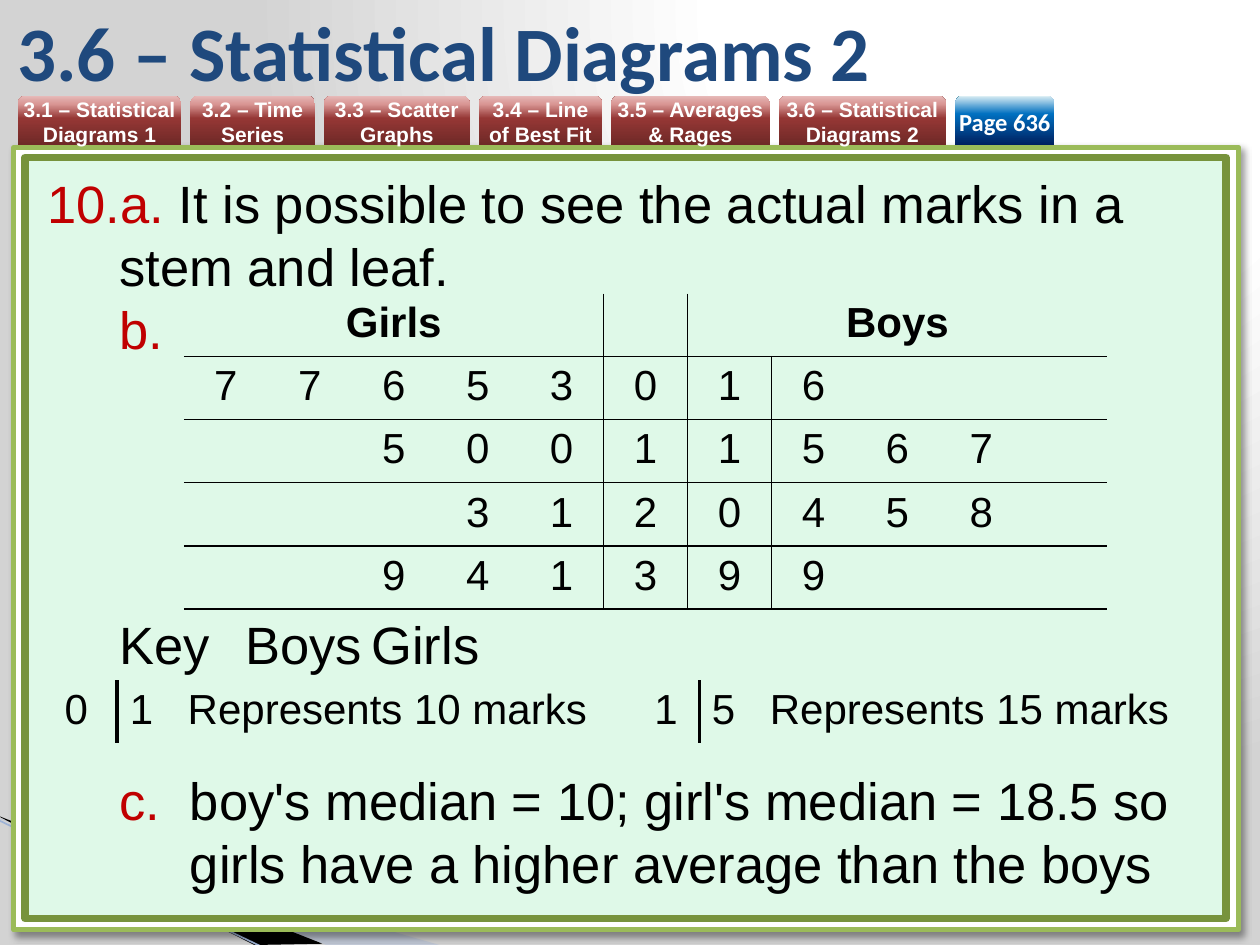
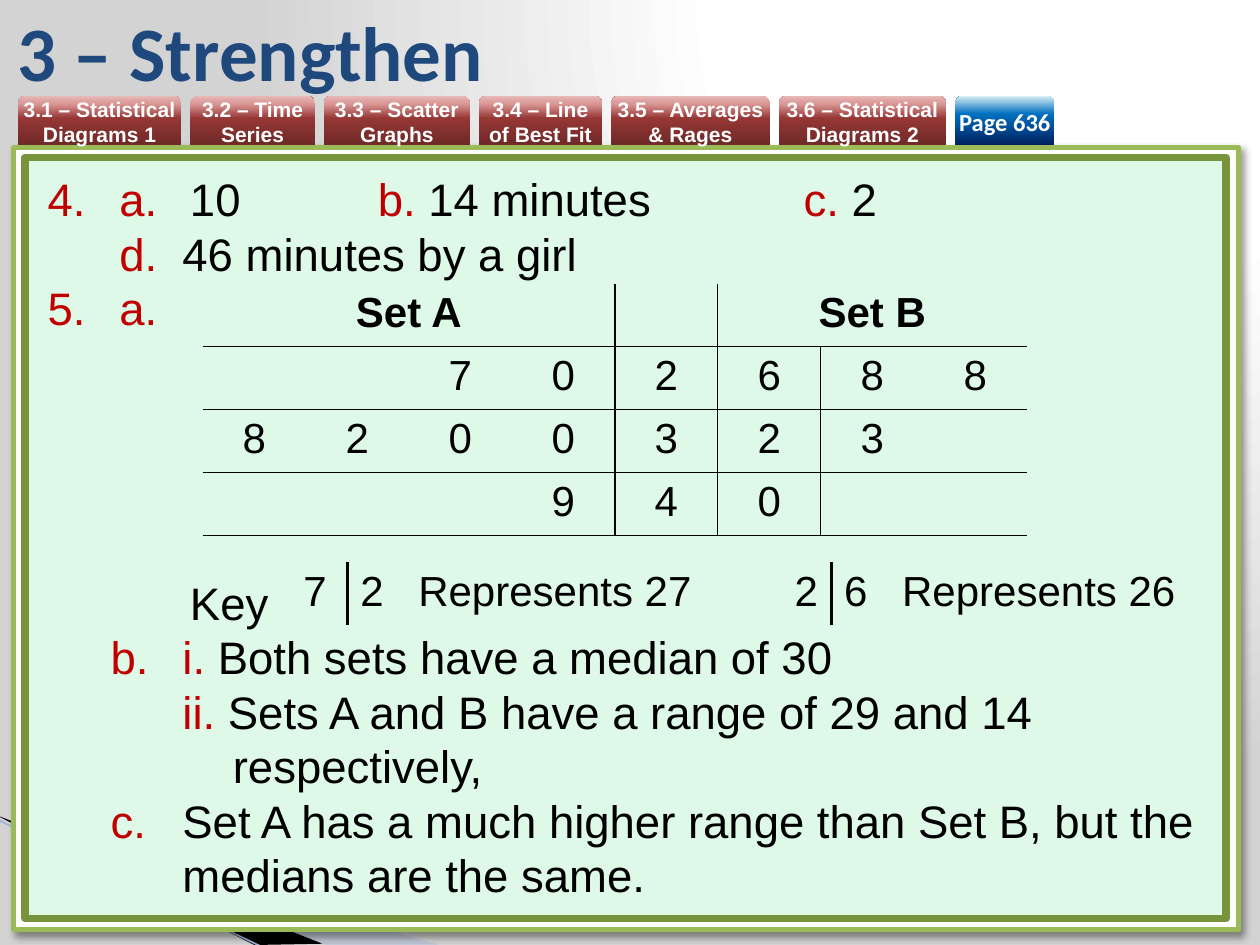
from pptx import Presentation
from pptx.dml.color import RGBColor
from pptx.enum.shapes import MSO_CONNECTOR, MSO_SHAPE
from pptx.enum.text import MSO_ANCHOR, PP_ALIGN
from pptx.oxml import parse_xml
from pptx.oxml.ns import qn
from pptx.util import Inches, Pt
from lxml.etree import SubElement

# Colours
BLACK = RGBColor(0x00, 0x00, 0x00)
WHITE = RGBColor(0xFF, 0xFF, 0xFF)
RED = RGBColor(0xC0, 0x00, 0x00)
NAVY = RGBColor(0x1F, 0x49, 0x7D)
LIME = RGBColor(0x9B, 0xBB, 0x59)
OLIVE = RGBColor(0x77, 0x93, 0x3C)
MINT = RGBColor(0xDF, 0xF9, 0xE8)
MIST = RGBColor(0xA7, 0xB9, 0xDB)
STEEL = RGBColor(0x9E, 0xB3, 0xD6)
GREY = RGBColor(0xD3, 0xD3, 0xD3)
MAROON = [(0, RGBColor(0x6F, 0x29, 0x27)), (54, RGBColor(0x95, 0x37, 0x35)),
          (83, RGBColor(0xD9, 0x96, 0x94)), (100, RGBColor(0xE6, 0xB9, 0xB8))]
BLUE = [(0, RGBColor(0x00, 0x20, 0x60)), (63, RGBColor(0x00, 0x70, 0xC0)),
        (100, RGBColor(0xDB, 0xEE, 0xF4))]
GLOW = [(0, WHITE), (40, WHITE), (100, GREY)]

# Text formats
HEAD = {"name": "Calibri", "size": Pt(44), "bold": True}
TAB = {"name": "Arial", "size": Pt(12), "bold": True}
PAGE = {"name": "Calibri", "size": Pt(14), "bold": True}
CELL = {"name": "Arial", "size": Pt(24), "bold": False}
TOP = {**CELL, "bold": True}

# Shared content: label, width, gradient, format
TABS = [
    ("3.1 – Statistical Diagrams 1", 1.3, MAROON, TAB),
    ("3.2 – Time Series", 0.99, MAROON, TAB),
    ("3.3 – Scatter Graphs", 1.16, MAROON, TAB),
    ("3.4 – Line of Best Fit", 0.98, MAROON, TAB),
    ("3.5 – Averages & Rages", 1.26, MAROON, TAB),
    ("3.6 – Statistical Diagrams 2", 1.33, MAROON, TAB),
    ("Page 636", 0.79, BLUE, PAGE),
]
GAP = 0.07
NO_STYLE = "{2D5ABB26-0587-4C30-8999-92F81FD0307C}"

# Slide content. Paragraph: runs as (text, colour), left and first indents,
# tab stops, number as (scheme, start), space before in points.
# Plot: leaf digits on both sides of the stem.
# Key: left, top, column widths, stem, leaf, meaning.
NUM, ABC = "arabicPeriod", "alphaLcPeriod"
SLIDES = [
    {
        "title": "3.6 – Statistical Diagrams 2",
        "size": 30,
        "text": [
            {"runs": [("a.", RED), (" It is possible to see the actual marks "
                                    "in a stem and leaf.", BLACK)],
             "left": 0.57, "first": -0.57, "num": (NUM, 10)},
            {"runs": [("b.", RED)], "left": 0.57},
            {"runs": [("Key\tBoys\tGirls", BLACK)],
             "left": 0.57, "stops": [2.62, 6], "before": 144},
            {"runs": [("boy's median = 10; girl's median = 18.5 so girls "
                       "have a higher average than the boys", BLACK)],
             "left": 1.13, "first": -0.56, "num": (ABC, 3), "before": 53},
        ],
        "plot": {
            "at": (1.46, 2.33), "width": 7.33, "sides": (5, 5),
            "heads": ("Girls", "Boys"),
            "rows": [("77653", "0", "16"), ("500", "1", "1567"),
                     ("31", "2", "0458"), ("941", "3", "99")],
        },
        "keys": [(0.28, 5.4, (0.65, 3.92), "0", "1", "Represents 10 marks"),
                 (5.02, 5.4, (0.53, 4.02), "1", "5", "Represents 15 marks")],
    },
    {
        "title": "3 – Strengthen",
        "size": 26,
        "text": [
            {"runs": [("a.", RED), ("\t10\t", BLACK), ("b.", RED),
                      (" 14 minutes\t", BLACK), ("c.", RED), (" 2", BLACK)],
             "left": 0.57, "first": -0.57, "stops": [1.13, 2.62, 6],
             "num": (NUM, 4)},
            {"runs": [("d.", RED), ("\t46 minutes by a girl", BLACK)],
             "left": 0.57, "stops": [1.16]},
            {"runs": [("a.", RED)],
             "left": 0.57, "first": -0.57, "num": (NUM, 5)},
            {"runs": [("Key", BLACK)], "left": 1.13, "before": 137},
            {"runs": [("i.", RED), (" Both sets have a median of 30", BLACK)],
             "left": 1.07, "first": -0.57, "num": (ABC, 2)},
            {"runs": [("ii.", RED), (" Sets A and B have a range of 29 and 14 "
                                     "respectively,", BLACK)],
             "left": 1.47, "first": -0.4},
            {"runs": [("Set A has a much higher range than Set B, but the "
                       "medians are the same.", BLACK)],
             "left": 1.07, "first": -0.57, "num": (ABC, 3)},
        ],
        "plot": {
            "at": (1.61, 2.25), "width": 6.54, "sides": (4, 3),
            "heads": ("Set A", "Set B"),
            "rows": [("70", "2", "688"), ("8200", "3", "23"),
                     ("9", "4", "0")],
        },
        "keys": [(2.24, 4.46, (0.52, 3.11), "7", "2", "Represents 27"),
                 (6.2, 4.46, (0.4, 3.04), "2", "6", "Represents 26")],
    },
]


def box(*sides):
    return [Inches(side) for side in sides]


def add(parent, tag, **attrs):
    node = SubElement(parent, qn(tag))
    for name, val in attrs.items():
        node.set(name, str(val))
    return node


def write(par, text, form, color):
    run = par.add_run()
    run.text = text
    for name, val in form.items():
        setattr(run.font, name, val)
    run.font.color.rgb = color


def blend(parent, stops, circle=False):
    """Make a gradient fill, linear upwards or circular from the top right."""
    grad = add(parent, "a:gradFill", rotWithShape=1)
    marks = add(grad, "a:gsLst")
    for pos, color in stops:
        add(add(marks, "a:gs", pos=pos * 1000), "a:srgbClr", val=color)
    if circle:
        way = add(grad, "a:path", path="circle")
        add(way, "a:fillToRect", l=65000, t=0, r=0, b=98000)
    else:
        add(grad, "a:lin", ang=16200000, scaled=0)
    return grad


def set_stops(props, stops):
    if stops:
        tabs = add(props, "a:tabLst")
        for stop in stops:
            add(tabs, "a:tab", pos=Inches(stop), algn="l")


# Shared frame
def backdrop(slide):
    root = slide.background.fill  # creates the background properties
    root.solid()
    props = slide.element.find(".//" + qn("p:bgPr"))
    props.replace(props[0], blend(props, GLOW, circle=True))


def swoosh(slide):
    bands = [(MIST, [(-0.01, 6.5), (3.49, 7.5), (2.59, 7.5), (-0.01, 6.49)]),
             (BLACK, [(0, 6.48), (2.56, 7.49), (2.02, 7.5), (0.01, 6.49)])]
    for color, dots in bands:
        pts = [box(*dot) for dot in dots]
        path = slide.shapes.build_freeform(*pts[0], scale=1.0)
        path.add_line_segments(pts[1:], close=True)
        band = path.convert_to_shape()
        band.shadow.inherit = False
        band.fill.solid()
        band.fill.fore_color.rgb = color
        band.line.fill.background()
        if color == MIST:
            tint = band.element.spPr.find(".//" + qn("a:srgbClr"))
            add(tint, "a:alpha", val=40000)
    edge = slide.shapes.add_connector(MSO_CONNECTOR.STRAIGHT,
                                      *box(-0.01, 6.51, 2.09, 7.52))
    edge.line.color.rgb = STEEL
    edge.line.width = Pt(0.95)
    add(edge.element.spPr, "a:effectLst")


def panels(slide):
    for place, fill, line, width in [
            ((0.11, 1.17, 9.72, 6.21), WHITE, LIME, 3),
            ((0.2, 1.25, 9.53, 6.04), MINT, OLIVE, 4.33)]:
        panel = slide.shapes.add_shape(MSO_SHAPE.RECTANGLE, *box(*place))
        panel.shadow.inherit = False
        panel.fill.solid()
        panel.fill.fore_color.rgb = fill
        panel.line.color.rgb = line
        panel.line.width = Pt(width)
        if fill == WHITE:
            list_ = panel.element.spPr.find(qn("a:effectLst"))
            drop = add(list_, "a:outerShdw", blurRad=Pt(4), dist=Pt(3),
                       dir=45 * 60000, algn="tl", rotWithShape=0)
            add(add(drop, "a:srgbClr", val=BLACK), "a:alpha", val=40000)


def nav(slide):
    left = 0.14
    for label, width, stops, form in TABS:
        tab = slide.shapes.add_shape(MSO_SHAPE.ROUND_2_SAME_RECTANGLE,
                                     *box(left, 0.76, width, 0.39))
        tab.shadow.inherit = False
        tab.line.fill.background()
        props = tab.element.spPr
        props.find(qn("a:prstGeom")).addnext(blend(props, stops))
        frame = tab.text_frame
        for name in ("left", "top", "right", "bottom"):
            setattr(frame, "margin_" + name, 0)
        frame.word_wrap = True
        frame.vertical_anchor = MSO_ANCHOR.MIDDLE
        par = frame.paragraphs[0]
        par.alignment = PP_ALIGN.CENTER
        write(par, label, form, WHITE)
        left += width + GAP


def heading(slide, text):
    frame = slide.shapes.add_textbox(*box(0.04, 0.05, 8.43, 0.71)).text_frame
    frame.word_wrap = True
    frame.vertical_anchor = MSO_ANCHOR.MIDDLE
    write(frame.paragraphs[0], text, HEAD, NAVY)


# Answers
def answers(slide, items, size):
    frame = slide.shapes.add_textbox(*box(0.28, 1.31, 9.37, 5.9)).text_frame
    frame.word_wrap = True
    form = {"name": "Arial", "size": Pt(size)}
    for i, item in enumerate(items):
        par = frame.add_paragraph() if i else frame.paragraphs[0]
        props = par._p.get_or_add_pPr()
        props.set("marL", str(Inches(item["left"])))
        props.set("indent", str(Inches(item.get("first", 0))))
        if "num" in item:
            kind, start = item["num"]
            add(add(props, "a:buClr"), "a:srgbClr", val=RED)
            add(props, "a:buAutoNum", type=kind, startAt=start)
        set_stops(props, item.get("stops"))
        if "before" in item:
            par.space_before = Pt(item["before"])
        for text, color in item["runs"]:
            write(par, text, form, color)


# Tables
def grid(slide, left, top, widths, rows):
    shape = slide.shapes.add_table(rows, len(widths), *box(
        left, top, sum(widths), rows * 0.5))
    table = shape.table
    table.first_row = table.horz_banding = False
    table._tbl.tblPr.find(qn("a:tableStyleId")).text = NO_STYLE
    for col, width in zip(table.columns, widths):
        col.width = Inches(width)
    for cell in table.iter_cells():
        cell.fill.background()
    return table


def rule(cell, sides, width):
    props = cell._tc.get_or_add_tcPr()
    for i, side in enumerate(sides):
        line = parse_xml(
            f'<a:{side} xmlns:a="http://schemas.openxmlformats.org/drawingml/'
            f'2006/main" w="{Pt(width)}"><a:solidFill><a:srgbClr '
            f'val="{BLACK}"/></a:solidFill></a:{side}>')
        props.insert(i, line)


def center(cell, text, form):
    par = cell.text_frame.paragraphs[0]
    par.alignment = PP_ALIGN.CENTER
    write(par, text, form, BLACK)


def stem_plot(slide, plot):
    stem, right = plot["sides"]
    cols = stem + 1 + right
    table = grid(slide, *plot["at"], [plot["width"] / cols] * cols,
                 len(plot["rows"]) + 1)
    for r in range(len(table.rows)):
        for c in range(cols):
            sides = {stem - 1: ["lnR"], stem: ["lnL", "lnR"],
                     stem + 1: ["lnL"]}.get(c, [])
            tops = ["lnT"] if r else []
            rule(table.cell(r, c), sides + tops + ["lnB"], 1)
    for text, start, end in zip(plot["heads"], (0, stem + 1),
                                (stem - 1, cols - 1)):
        rule(table.cell(0, start), ["lnR"] if start == 0 else [], 1)
        table.cell(0, start).merge(table.cell(0, end))
        center(table.cell(0, start), text, TOP)
    for r, (low, mid, high) in enumerate(plot["rows"], 1):
        for c, digit in enumerate(low + mid + high, stem - len(low)):
            center(table.cell(r, c), digit, CELL)


def key(slide, left, top, widths, stem, leaf, text):
    table = grid(slide, left, top, widths, 1)
    first, last = table.cell(0, 0), table.cell(0, 1)
    rule(first, ["lnR"], 2.25)
    rule(last, ["lnL"], 2.25)
    center(first, stem, CELL)
    par = last.text_frame.paragraphs[0]
    set_stops(par._p.get_or_add_pPr(), [0.46])
    write(par, f"{leaf}\t{text}", CELL, BLACK)


def main():
    deck = Presentation()
    deck.slide_width, deck.slide_height = box(10, 7.5)
    for page in SLIDES:
        slide = deck.slides.add_slide(deck.slide_layouts[6])
        for part in (backdrop, swoosh, panels, nav):
            part(slide)
        heading(slide, page["title"])
        answers(slide, page["text"], page["size"])
        stem_plot(slide, page["plot"])
        for item in page["keys"]:
            key(slide, *item)
    deck.save("out.pptx")


if __name__ == "__main__":
    main()
